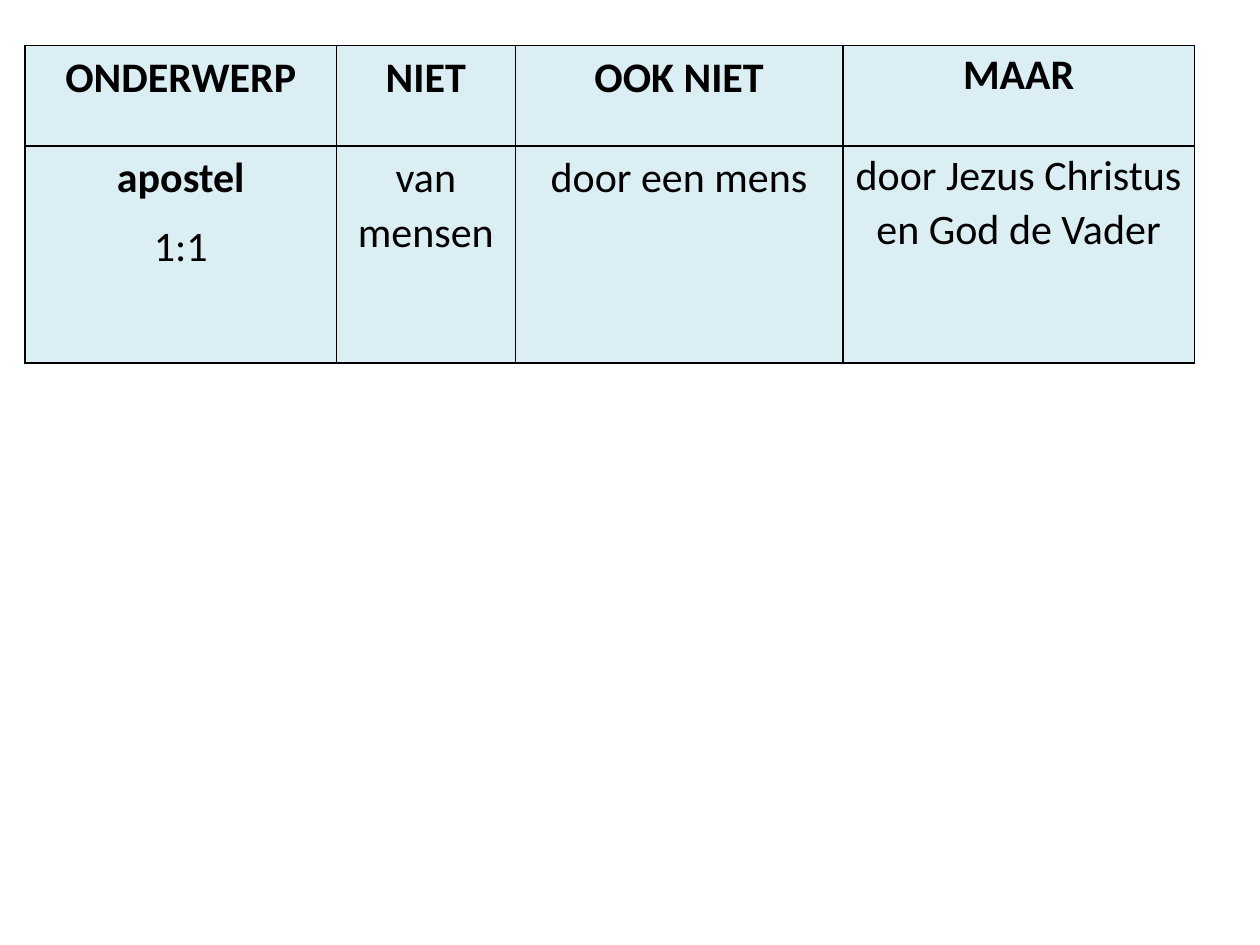
from pptx import Presentation
from pptx.dml.color import RGBColor
from pptx.enum.text import PP_ALIGN
from pptx.oxml import parse_xml
from pptx.oxml.ns import nsdecls
from pptx.util import Inches, Pt

BLACK = RGBColor(0x00, 0x00, 0x00)
PALE_BLUE = RGBColor(0xDB, 0xEE, 0xF4)

ROWS = [
    ["ONDERWERP", "NIET", "OOK NIET", "MAAR"],
    ["apostel\n1:1", "van mensen", "door een mens", "door Jezus Christus en God de Vader"],
]
BOLD = {*ROWS[0], "apostel"}
COL_WIDTHS = [2.47, 1.42, 2.6, 2.79]
ROW_HEIGHTS = [0.8, 1.72]
MARGINS = [(0.06, 0.03, 0.06, 0.03)] * 3 + [(0.01, 0.01, 0.01, 0)]


def add_borders(cell):
    tcPr = cell._tc.get_or_add_tcPr()
    for i, side in enumerate(("lnL", "lnR", "lnT", "lnB")):
        tcPr.insert(i, parse_xml(
            f'<a:{side} {nsdecls("a")} w="{Pt(1)}"><a:solidFill>'
            f'<a:srgbClr val="{BLACK}"/></a:solidFill></a:{side}>'))


def fill_cell(cell, text, margins):
    cell.fill.solid()
    cell.fill.fore_color.rgb = PALE_BLUE
    add_borders(cell)
    (cell.margin_left, cell.margin_top,
     cell.margin_right, cell.margin_bottom) = map(Inches, margins)
    tf = cell.text_frame
    tf.text = text
    for p in tf.paragraphs:
        p.alignment = PP_ALIGN.CENTER
        p.line_spacing = 1.06
        p.space_after = Pt(8)
        p.font.name = "Calibri"
        p.font.size = Pt(24)
        p.font.bold = p.text in BOLD
        p.font.color.rgb = BLACK


def main():
    prs = Presentation()
    prs.slide_width, prs.slide_height = Inches(10), Inches(7.5)
    s = prs.slides.add_slide(prs.slide_layouts[6])
    table = s.shapes.add_table(
        len(ROWS), len(COL_WIDTHS), Inches(0.2), Inches(0.36),
        Inches(sum(COL_WIDTHS)), Inches(sum(ROW_HEIGHTS))).table
    for col, width in zip(table.columns, COL_WIDTHS):
        col.width = Inches(width)
    for row, height, texts in zip(table.rows, ROW_HEIGHTS, ROWS):
        row.height = Inches(height)
        for cell, text, margins in zip(row.cells, texts, MARGINS):
            fill_cell(cell, text, margins)
    prs.save("out.pptx")


if __name__ == "__main__":
    main()
